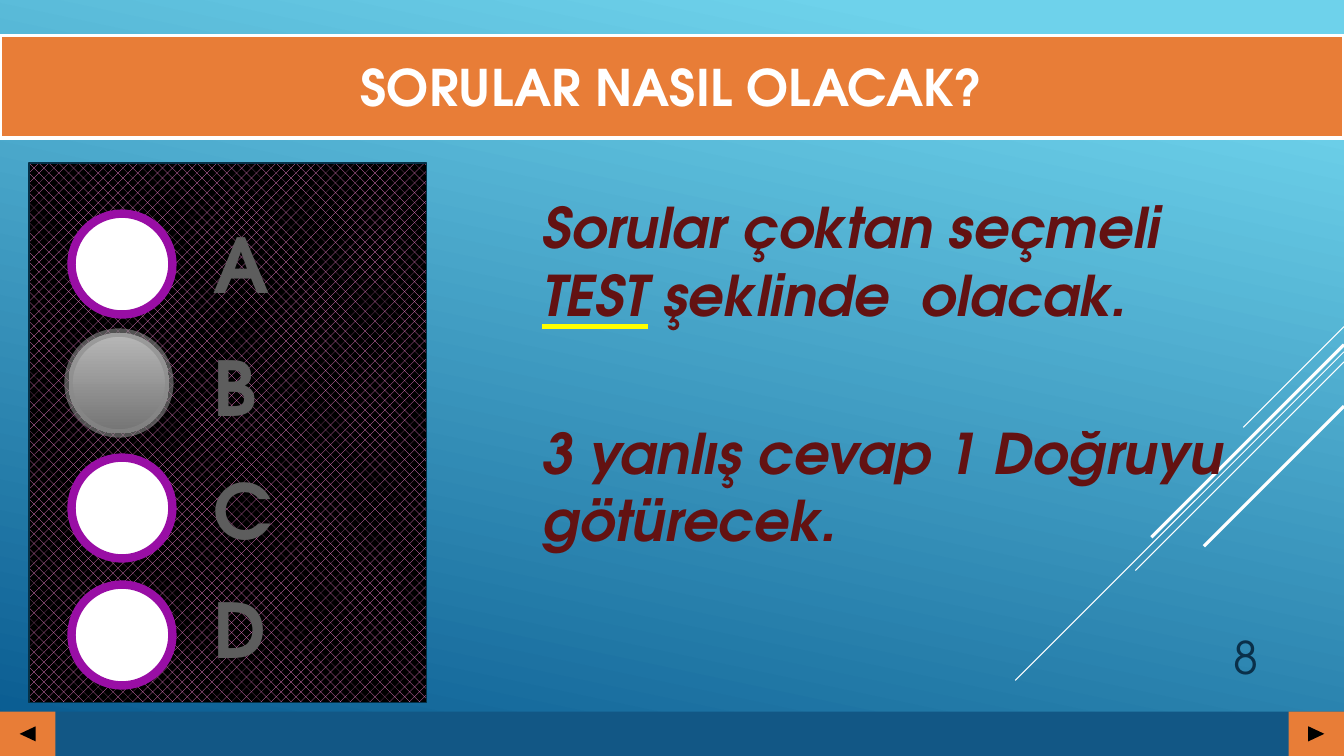
"""Build the quiz-format slide with its answer panel and navigation bar."""
from dataclasses import dataclass

from lxml import etree
from pptx import Presentation
from pptx.dml.color import RGBColor
from pptx.enum.dml import MSO_PATTERN
from pptx.enum.shapes import MSO_CONNECTOR, MSO_SHAPE
from pptx.enum.text import MSO_ANCHOR, MSO_AUTO_SIZE, PP_ALIGN
from pptx.oxml.ns import qn
from pptx.util import Inches, Pt

RECTANGLE, OVAL, TRIANGLE = MSO_SHAPE.RECTANGLE, MSO_SHAPE.OVAL, MSO_SHAPE.ISOSCELES_TRIANGLE
STRAIGHT = MSO_CONNECTOR.STRAIGHT
LEFT, CENTER, RIGHT = PP_ALIGN.LEFT, PP_ALIGN.CENTER, PP_ALIGN.RIGHT
MIDDLE, TOP, BOTTOM = MSO_ANCHOR.MIDDLE, MSO_ANCHOR.TOP, MSO_ANCHOR.BOTTOM
NO_AUTOFIT = MSO_AUTO_SIZE.NONE
DOTTED = MSO_PATTERN.PERCENT_30
TITLE_ONLY = 5
SLIDE_WIDTH, SLIDE_HEIGHT = 13.33, 7.5


@dataclass(frozen=True)
class Theme:
    """Colours, font and type sizes of the slide."""
    font: str = "TeX Gyre Adventor"
    sky: str = "6ED2EB"
    sea: str = "06588E"
    bar: str = "125785"
    orange: str = "E87D37"
    white: str = "FFFFFF"
    black: str = "000000"
    pink: str = "FB85D4"
    panel_edge: str = "043148"
    purple: str = "990EA5"
    marked_light: str = "B8B8B8"
    marked_dark: str = "737373"
    marked_edge: str = "898989"
    letter: str = "5D5D5D"
    body: str = "631212"
    underline: str = "FFFF00"
    number: str = "0A304A"
    title_size: int = 36
    body_size: int = 40
    letter_size: int = 54
    number_size: int = 32


THEME = Theme()


def rgb(colour):
    """Turn a hex string into a colour."""
    return RGBColor.from_string(colour)


def fill_gradient(fill, stops, angle):
    """Apply a two-stop linear gradient."""
    fill.gradient()
    fill.gradient_angle = angle
    for stop, (position, colour) in zip(fill.gradient_stops, stops):
        stop.position = position
        stop.color.rgb = rgb(colour)


def style_shape(shape, fill=None, line=None, width=0):
    """Set a shape's solid fill and outline."""
    if fill:
        shape.fill.solid()
        shape.fill.fore_color.rgb = rgb(fill)
    if line:
        shape.line.color.rgb = rgb(line)
        shape.line.width = Pt(width)
    else:
        shape.line.fill.background()


def add_shape(slide, kind, box, fill=None, line=None, width=0):
    """Add a preset shape without a shadow."""
    shape = slide.shapes.add_shape(kind, *map(Inches, box))
    shape.shadow.inherit = False
    style_shape(shape, fill, line, width)
    return shape


def add_diagonal(slide, top, length, width):
    """Draw a 45-degree line falling leftwards from the right edge."""
    ends = (SLIDE_WIDTH, top, SLIDE_WIDTH - length, top + length)
    connector = slide.shapes.add_connector(STRAIGHT, *map(Inches, ends))
    connector.line.color.rgb = rgb(THEME.white)
    connector.line.width = Pt(width)
    etree.SubElement(connector._element.spPr, qn("a:effectLst"))


def format_paragraph(paragraph, size, colour, align=LEFT, bold=True, italic=False):
    """Set the font and alignment of a paragraph."""
    paragraph.alignment = align
    font = paragraph.font
    font.name, font.size = THEME.font, Pt(size)
    font.bold, font.italic = bold, italic
    font.color.rgb = rgb(colour)


def add_text(slide, box, runs, size, colour, anchor=TOP, insets=(0.1, 0.05), **style):
    """Add a wrapped text box and return the paragraph's runs."""
    frame = slide.shapes.add_textbox(*map(Inches, box)).text_frame
    frame.word_wrap = True
    frame.vertical_anchor = anchor
    frame.margin_left = frame.margin_right = Inches(insets[0])
    frame.margin_top = frame.margin_bottom = Inches(insets[1])
    paragraph = frame.paragraphs[0]
    for text in runs:
        paragraph.add_run().text = text
    format_paragraph(paragraph, size, colour, **style)
    return paragraph.runs


def add_statement(slide, top, runs):
    """Add one of the large italic statements."""
    return add_text(slide, (5.25, top, 7.09, 1.48), runs, THEME.body_size, THEME.body,
                    MIDDLE, (0.13, 0.07), italic=True)


def underline_run(run, colour):
    """Underline a run in its own colour."""
    run.font.underline = True
    underline = etree.SubElement(run.font._element, qn("a:uFill"))
    solid = etree.SubElement(underline, qn("a:solidFill"))
    etree.SubElement(solid, qn("a:srgbClr"), val=colour)


def add_navigation(slide):
    """Add the bottom bar with its back and forward buttons."""
    top, height, button = 7.06, 0.44, 0.55
    add_shape(slide, RECTANGLE, (0, top, SLIDE_WIDTH, height), THEME.bar)
    for left, rotation in ((0, 270), (SLIDE_WIDTH - button, 90)):
        add_shape(slide, RECTANGLE, (left, top, button, height), THEME.orange)
        arrow = add_shape(slide, TRIANGLE, (left + 0.2, 7.2, 0.15, 0.16), THEME.black)
        arrow.rotation = rotation


def add_title(slide, text):
    """Fill and format the title band."""
    title = slide.shapes.title
    title.left, title.top = Inches(0), Inches(0.35)
    title.width, title.height = Inches(SLIDE_WIDTH), Inches(1.02)
    style_shape(title, THEME.orange, THEME.white, 2.25)
    frame = title.text_frame
    frame.text = text
    frame.auto_size = NO_AUTOFIT
    frame.vertical_anchor = MIDDLE
    format_paragraph(frame.paragraphs[0], THEME.title_size, THEME.white, CENTER)


def add_option(slide, letter, circle_left, circle_top, letter_top, marked):
    """Add an answer circle and its letter."""
    edge = THEME.marked_edge if marked else THEME.purple
    circle = add_shape(slide, OVAL, (circle_left, circle_top, 1, 1), THEME.white, edge, 6)
    if marked:
        fill_gradient(circle.fill, ((0, THEME.marked_light), (1, THEME.marked_dark)), 270)
        colour = circle.line._ln.find(".//" + qn("a:srgbClr"))
        etree.SubElement(colour, qn("a:alpha"), val="60000")
    add_text(slide, (2.02, letter_top, 0.9, 1.01), [letter], THEME.letter_size, THEME.letter)


def add_answer_panel(slide):
    """Add the dark panel holding the four options."""
    panel = add_shape(slide, RECTANGLE, (0.29, 1.62, 3.94, 5.35),
                      line=THEME.panel_edge, width=1.25)
    panel.fill.patterned()
    panel.fill.pattern = DOTTED
    panel.fill.fore_color.rgb = rgb(THEME.pink)
    panel.fill.back_color.rgb = rgb(THEME.black)
    for option in (("A", 0.71, 2.12, 2.11, False), ("B", 0.68, 3.3, 3.33, True),
                   ("C", 0.71, 4.54, 4.55, False), ("D", 0.71, 5.8, 5.73, False)):
        add_option(slide, *option)


def main():
    """Assemble and save the slide."""
    presentation = Presentation()
    presentation.slide_width = Inches(SLIDE_WIDTH)
    presentation.slide_height = Inches(SLIDE_HEIGHT)
    slide = presentation.slides.add_slide(presentation.slide_layouts[TITLE_ONLY])
    fill_gradient(slide.background.fill, ((0.1, THEME.sky), (1, THEME.sea)), 258)
    for diagonal in ((3.24, 1, 0.75), (3.49, 3.26, 0.75), (3.59, 2.07, 0.75),
                     (3.42, 1.91, 2.25), (4.03, 1.39, 2.25)):
        add_diagonal(slide, *diagonal)
    add_navigation(slide)
    add_title(slide, "SORULAR NASIL OLACAK?")
    add_answer_panel(slide)
    runs = add_statement(slide, 1.84, ["Sorular çoktan seçmeli ", "TEST", " şeklinde  olacak."])
    underline_run(runs[1], THEME.underline)
    add_statement(slide, 4.08, ["3 yanlış cevap 1 Doğruyu götürecek."])
    add_text(slide, (11.33, 6.1, 1.25, 0.73), ["8"], THEME.number_size, THEME.number,
             BOTTOM, align=RIGHT, bold=False)
    presentation.save("out.pptx")


if __name__ == "__main__":
    main()
